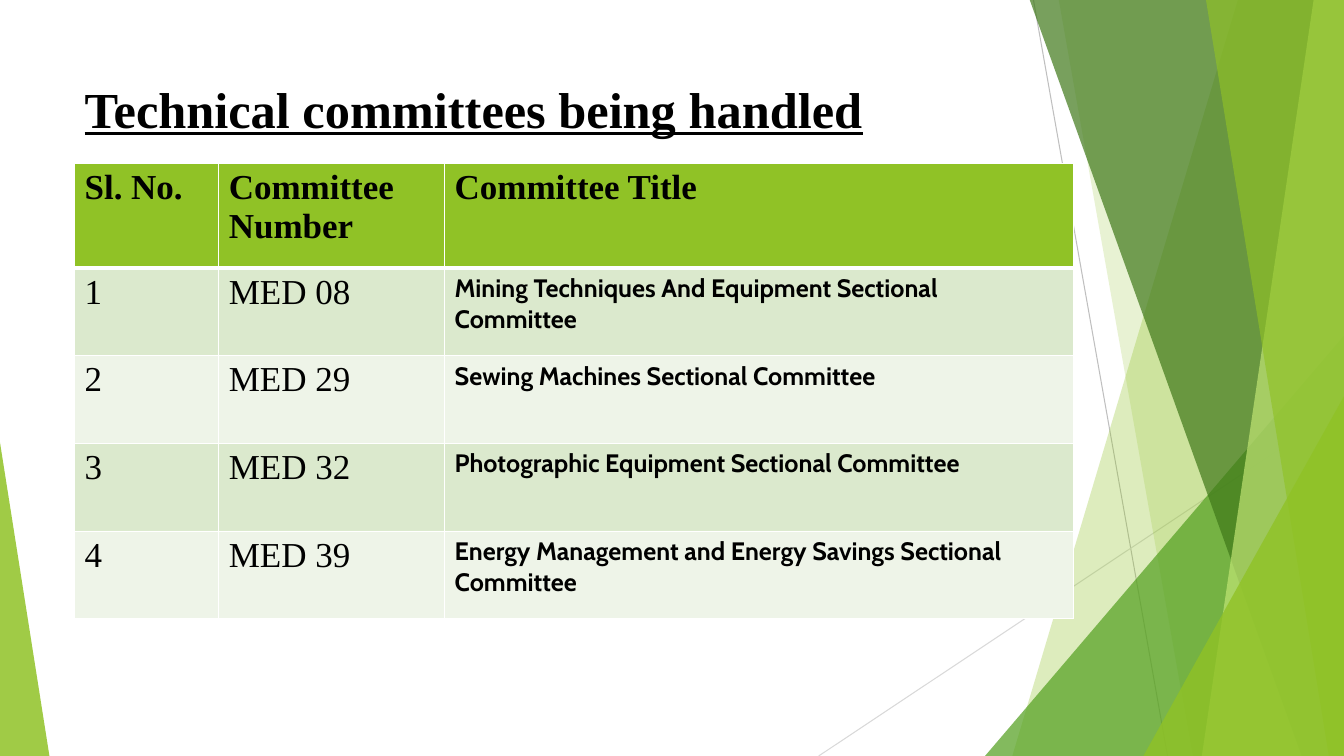
from lxml import etree
from pptx import Presentation
from pptx.dml.color import RGBColor
from pptx.enum.shapes import MSO_CONNECTOR, MSO_SHAPE
from pptx.enum.text import MSO_ANCHOR, MSO_AUTO_SIZE, PP_ALIGN
from pptx.oxml.ns import qn
from pptx.util import Inches, Pt

STRAIGHT = MSO_CONNECTOR.STRAIGHT
TRIANGLE = MSO_SHAPE.ISOSCELES_TRIANGLE
TITLE_ONLY = 5

# Content
TITLE = "Technical committees being handled"
HEADER = ("Sl. No.", "Committee Number", "Committee Title")
COMMITTEES = [
    ("MED 08", "Mining Techniques And Equipment Sectional Committee"),
    ("MED 29", "Sewing Machines Sectional Committee"),
    ("MED 32", "Photographic Equipment Sectional Committee"),
    ("MED 39", "Energy Management and Energy Savings Sectional Committee"),
]
COLUMN_WIDTHS = (1.43, 2.24, 6.24)
HEADER_HEIGHT, ROW_HEIGHT = 1.04, 0.87
SERIF, SANS = "Times New Roman", "Cabin"
GREEN, BLACK, WHITE = "90C226", "000000", "FFFFFF"
BANDS = ("DBE9CD", "EEF4E8")

# Decoration
RIGHT, TOP, BOTTOM = 13.33, -0.01, 7.5
RAYS = [((10.25, 0), (11.58, BOTTOM), "BFBFBF"),
        ((RIGHT, 4.03), (8.12, BOTTOM), "D9D9D9")]
# Facets reach the right edge: ("band", top x, bottom x, colour, opacity %)
# or ("corner", left, top, width, apex position, colour, opacity %)
FACETS = [
    ("band", 12.28, 10.04, GREEN, 30),
    ("band", 10.5, 11.83, GREEN, 20),
    ("corner", 9.77, 3.33, 3.56, 1, "54A021", 72),
    ("band", 10.21, 12.91, "3F7819", 70),
    ("band", 13.03, 11.92, "C0E474", 70),
    ("band", 11.96, 13.18, GREEN, 65),
    ("corner", 11.34, 3.93, 1.99, 1, GREEN, 80),
    ("corner", 0, 4.39, 0.49, 0, GREEN, 85),
]


def paint(fill, colour, opacity=100):
    fill.solid()
    fill.fore_color.rgb = RGBColor.from_string(colour)
    if opacity < 100:
        tint = fill._xPr.find(qn("a:solidFill"))[0]
        etree.SubElement(tint, qn("a:alpha"), val=str(opacity * 1000))


def style(paragraph, font_name, size, bold=False, underline=False):
    for run in paragraph.runs:
        font = run.font
        font.name, font.size = font_name, Pt(size)
        font.bold, font.underline = bold, underline
        paint(font.fill, BLACK)


def add_ray(shapes, start, end, colour):
    ray = shapes.add_connector(STRAIGHT, *map(Inches, start + end))
    paint(ray.line.fill, colour)
    ray.line.width = Pt(0.75)
    etree.SubElement(ray._element.spPr, qn("a:effectLst"))


def add_facet(shapes, kind, *geometry, colour, opacity):
    if kind == "band":
        top_x, bottom_x = geometry
        outline = [(top_x, TOP), (RIGHT, TOP), (RIGHT, BOTTOM), (bottom_x, BOTTOM)]
        points = [(Inches(x), Inches(y)) for x, y in outline]
        builder = shapes.build_freeform(*points[0])
        builder.add_line_segments(points[1:], close=True)
        facet = builder.convert_to_shape()
    else:
        left, top, width, apex = geometry
        facet = shapes.add_shape(TRIANGLE, Inches(left), Inches(top),
                                 Inches(width), Inches(BOTTOM - top))
        facet.adjustments[0] = apex
    paint(facet.fill, colour, opacity)
    facet.line.fill.background()
    facet.shadow.inherit = False


def set_borders(cell, top=1, bottom=1):
    properties = cell._tc.get_or_add_tcPr()
    widths = (("lnL", 1), ("lnR", 1), ("lnT", top), ("lnB", bottom))
    for position, (side, width) in enumerate(widths):
        border = etree.Element(qn("a:" + side), w=str(Pt(width)))
        solid = etree.SubElement(border, qn("a:solidFill"))
        etree.SubElement(solid, qn("a:srgbClr"), val=WHITE)
        properties.insert(position, border)


def add_committee_table(shapes):
    rows = [HEADER] + [(str(number), *committee)
                       for number, committee in enumerate(COMMITTEES, 1)]
    height = HEADER_HEIGHT + ROW_HEIGHT * len(COMMITTEES)
    table = shapes.add_table(len(rows), len(HEADER), Inches(0.74), Inches(1.62),
                             Inches(sum(COLUMN_WIDTHS)), Inches(height)).table
    for column, width in zip(table.columns, COLUMN_WIDTHS):
        column.width = Inches(width)
    for r, row in enumerate(rows):
        is_header = r == 0
        table.rows[r].height = Inches(HEADER_HEIGHT if is_header else ROW_HEIGHT)
        for c, text in enumerate(row):
            cell = table.cell(r, c)
            cell.text = text
            paint(cell.fill, GREEN if is_header else BANDS[(r - 1) % 2])
            set_borders(cell, top=3 if r == 1 else 1, bottom=3 if is_header else 1)
            if c == 2 and not is_header:
                style(cell.text_frame.paragraphs[0], SANS, 18, bold=True)
            else:
                style(cell.text_frame.paragraphs[0], SERIF, 25, bold=is_header)


def main():
    deck = Presentation()
    deck.slide_width, deck.slide_height = Inches(RIGHT), Inches(BOTTOM)
    slide = deck.slides.add_slide(deck.slide_layouts[TITLE_ONLY])
    paint(slide.background.fill, WHITE)

    # Green facets and thin rays
    for ray in RAYS:
        add_ray(slide.shapes, *ray)
    for *facet, colour, opacity in FACETS:
        add_facet(slide.shapes, *facet, colour=colour, opacity=opacity)

    # Title
    title = slide.shapes.title
    title.left, title.top = Inches(0.74), Inches(0.67)
    title.width, title.height = Inches(9.4), Inches(1.12)
    frame = title.text_frame
    frame.text = TITLE
    frame.word_wrap = True
    frame.auto_size = MSO_AUTO_SIZE.NONE
    frame.vertical_anchor = MSO_ANCHOR.TOP
    frame.margin_top = Inches(0.1)
    frame.paragraphs[0].alignment = PP_ALIGN.LEFT
    style(frame.paragraphs[0], SERIF, 36, bold=True, underline=True)

    # Committees
    add_committee_table(slide.shapes)
    deck.save("out.pptx")


if __name__ == "__main__":
    main()
